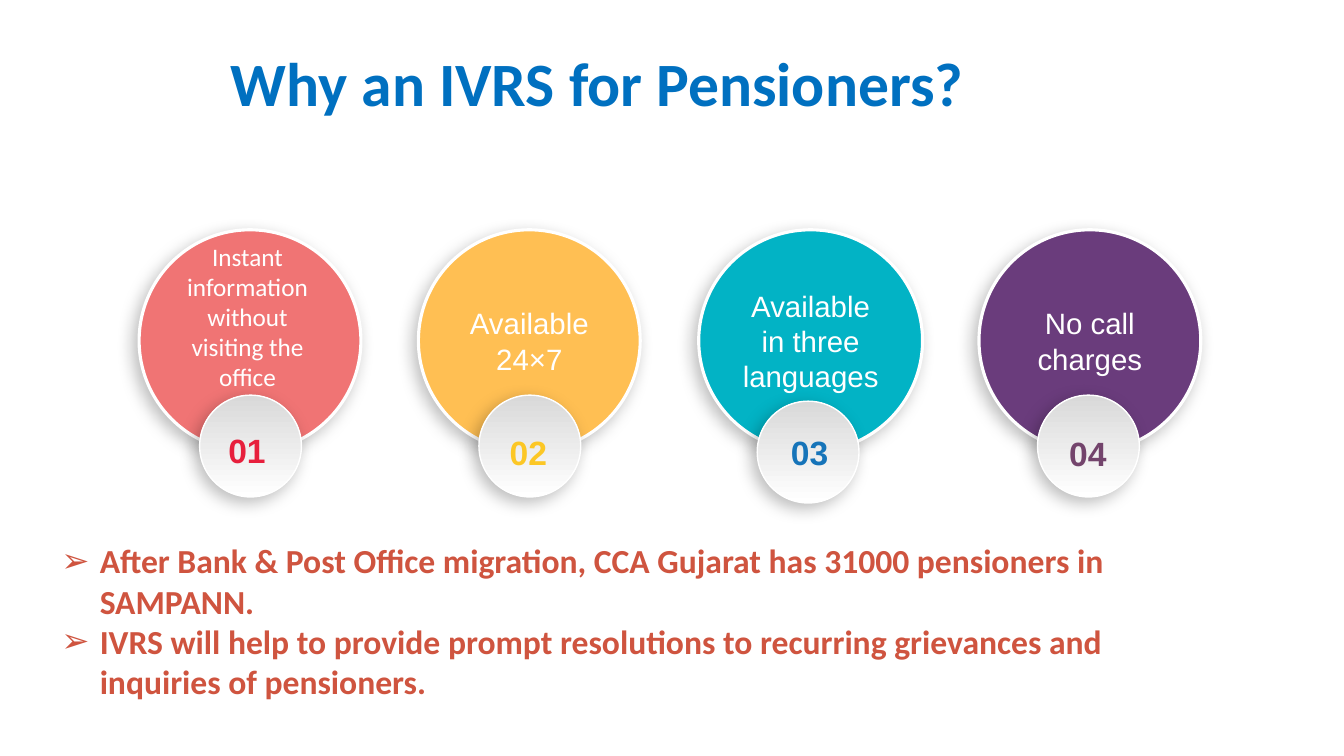
import pptx
import pptx.dml.color
import pptx.enum.shapes
import pptx.enum.text
import pptx.oxml
import pptx.oxml.ns
import pptx.util

SCALE = 9144  # EMU in one px, 100 px to the inch
ALIGN = pptx.enum.text.PP_ALIGN
ANCHOR = pptx.enum.text.MSO_ANCHOR
OVAL = pptx.enum.shapes.MSO_SHAPE.OVAL
NS = pptx.oxml.ns.nsdecls("a")

SHADOW = f"""<a:effectLst {NS}>
  <a:outerShdw blurRad="152400" dist="63500" dir="8100000" algn="tr" rotWithShape="0">
    <a:srgbClr val="000000"><a:alpha val="26000"/></a:srgbClr>
  </a:outerShdw>
</a:effectLst>"""

WHITE = "FFFFFF"
TITLE = {"size": 44, "name": "Calibri", "bold": True, "color": "0070C0"}
LIST = {"size": 24, "name": "Calibri", "bold": True, "color": "CF543F"}
LABEL = {"size": 21, "name": "Arial", "color": WHITE}
SMALL = {"size": 18, "name": "Calibri", "color": WHITE}
COUNT = {"size": 24, "name": "Arial", "bold": True}

# fill, width, badge left and top, number left and top, number colour
REASONS = [
    ("F07474", 220, 198, 392, 215, 422, "E71F3C"),
    ("FFBF53", 220, 475, 392, 494, 424, "FCC725"),
    ("02B3C5", 222, 751, 398, 773, 424, "1674B9"),
    ("6A3C7C", 220, 1029, 392, 1049, 425, "73446C"),
]
LABELS = ["", "Available 24×7", "Available in three languages", "No call charges"]
POINTS = [
    "After Bank & Post Office migration, CCA Gujarat has 31000 pensioners in SAMPANN.",
    "IVRS will help to provide prompt resolutions to recurring grievances and "
    "inquiries of pensioners.",
]


def px(*nums):
    return [pptx.util.Emu(n * SCALE) for n in nums]


def rgb(code):
    return pptx.dml.color.RGBColor.from_string(code)


def place(shape, *box):
    shape.left, shape.top, shape.width, shape.height = px(*box)


def write(shape, lines, style, align=ALIGN.LEFT, anchor=ANCHOR.TOP):
    """Fill the shape with one paragraph a line."""
    frame = shape.text_frame
    frame.word_wrap = True
    frame.auto_size = pptx.enum.text.MSO_AUTO_SIZE.NONE
    frame.vertical_anchor = anchor
    frame.text = "\n".join(lines)
    for para in frame.paragraphs:
        para.alignment = align
        para.space_before = pptx.util.Pt(0)
        for run in para.runs:
            for key, value in style.items():
                if key == "color":
                    run.font.color.rgb = rgb(value)
                else:
                    value = pptx.util.Pt(value) if key == "size" else value
                    setattr(run.font, key, value)


def bullet(para, mark):
    props = para._p.get_or_add_pPr()
    indent = px(38)[0]
    props.set("marL", str(indent))
    props.set("indent", str(-indent))
    for tag in ('buFont typeface="Arial"', f'buChar char="{mark}"'):
        props.append(pptx.oxml.parse_xml(f"<a:{tag} {NS}/>"))


def disc(slide, box, line):
    """Add a white-edged circle with a soft shadow."""
    shape = slide.shapes.add_shape(OVAL, *px(*box))
    shape.line.color.rgb = rgb(WHITE)
    shape.line.width = pptx.util.Pt(line)
    shape._element.spPr.append(pptx.oxml.parse_xml(SHADOW))
    return shape


def circle(slide, box, fill, label):
    shape = disc(slide, box, 2.25)
    shape.fill.solid()
    shape.fill.fore_color.rgb = rgb(fill)
    if label:
        write(shape, [label], LABEL, ALIGN.CENTER, ANCHOR.MIDDLE)


def badge(slide, left, top):
    shape = disc(slide, (left, top, 101, 101), 1)
    shape.fill.gradient()
    shape.fill.gradient_angle = 90
    for stop, code in zip(shape.fill.gradient_stops, (WHITE, "D9D9D9")):
        stop.color.rgb = rgb(code)


def note(slide, box, text, style):
    """Add a centred text box."""
    shape = slide.shapes.add_textbox(*px(*box))
    write(shape, [text], style, ALIGN.CENTER)


def main():
    deck = pptx.Presentation()
    deck.slide_width, deck.slide_height = px(1333, 750)
    slide = deck.slides.add_slide(deck.slide_layouts[1])
    title, body = slide.placeholders

    place(title, 219, 40, 840, 84)
    write(title, ["Why an IVRS for Pensioners?"], TITLE)

    for i, (reason, label) in enumerate(zip(REASONS, LABELS)):
        fill, width, left, top, x, y, tint = reason
        circle(slide, (138 + 833 * i // 3, 228, width, 220), fill, label)
        badge(slide, left, top)
        note(slide, (x, y, 60, 51), f"{i + 1:02}", {**COUNT, "color": tint})
    note(slide, (175, 234, 141, 96),
         "Instant information without visiting the office", SMALL)

    place(body, 51, 531, 1090, 208)
    write(body, POINTS, LIST)
    for para in body.text_frame.paragraphs:
        bullet(para, "➢")

    deck.save("out.pptx")


if __name__ == "__main__":
    main()
